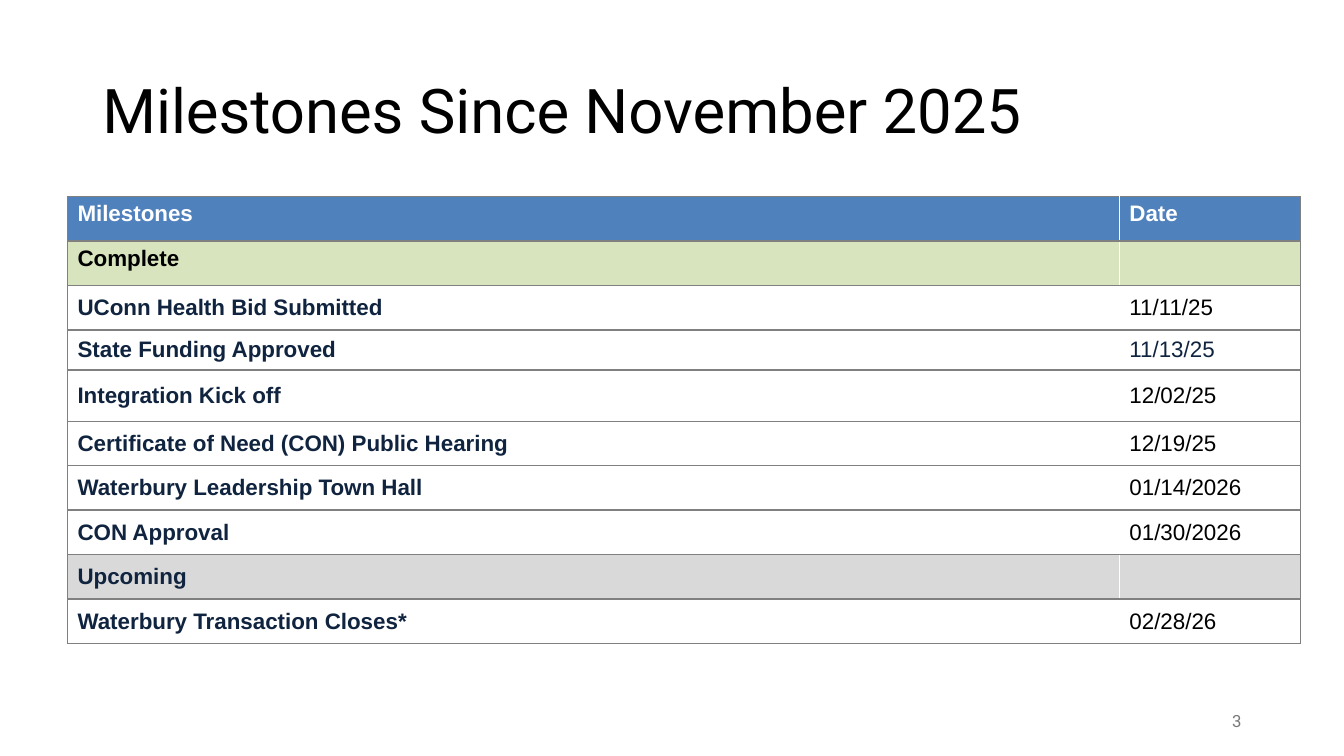
from lxml import etree
from pptx import Presentation
from pptx.dml.color import RGBColor
from pptx.enum import text
from pptx.oxml import ns
from pptx.util import Pt

COLORS = {
    "black": "000000", "white": "FFFFFF", "navy": "10243F", "blue": "4F81BD",
    "green": "D7E4BD", "silver": "D9D9D9", "border": "808080", "number": "797979",
}
ROW_HEIGHT = 31.8
COLUMN_WIDTHS = (751.4, 129.3)

# milestone, date, fill, milestone colour, date colour, row height
MILESTONES = [
    ("Milestones", "Date", "blue", "white", "white", ROW_HEIGHT),
    ("Complete", "", "green", "black", "black", ROW_HEIGHT),
    ("UConn Health Bid Submitted", "11/11/25", "white", "navy", "black", ROW_HEIGHT),
    ("State Funding Approved", "11/13/25", "white", "navy", "navy", 28.6),
    ("Integration Kick off", "12/02/25", "white", "navy", "black", 36.5),
    ("Certificate of Need (CON) Public Hearing", "12/19/25", "white", "navy", "black", ROW_HEIGHT),
    ("Waterbury Leadership Town Hall", "01/14/2026", "white", "navy", "black", ROW_HEIGHT),
    ("CON Approval", "01/30/2026", "white", "navy", "black", ROW_HEIGHT),
    ("Upcoming", "", "silver", "navy", "black", ROW_HEIGHT),
    ("Waterbury Transaction Closes*", "02/28/26", "white", "navy", "black", ROW_HEIGHT),
]


def rgb(color):
    return RGBColor.from_string(COLORS[color])


def write(frame, words, size=16, font="Arial", color="black", bold=False,
          align=text.PP_ALIGN.LEFT, spacing=1.0):
    paragraph = frame.paragraphs[0]
    paragraph.alignment = align
    paragraph.line_spacing = spacing
    run = paragraph.add_run()
    run.text = words
    run.font.size = Pt(size)
    run.font.name = font
    run.font.bold = bold
    run.font.color.rgb = rgb(color)


def add_label(slide, words, left, top, width, height, **style):
    label = slide.shapes.add_textbox(Pt(left), Pt(top), Pt(width), Pt(height))
    label.text_frame.word_wrap = True
    label.text_frame.vertical_anchor = text.MSO_ANCHOR.MIDDLE
    write(label.text_frame, words, font="Roboto", **style)


def set_borders(cell, **sides):
    """Draw 1 pt borders; sides are L, R, T, B in schema order."""
    properties = cell._tc.get_or_add_tcPr()
    for position, (side, color) in enumerate(sides.items()):
        line = etree.Element(ns.qn(f"a:ln{side}"), w=str(Pt(1)))
        fill = etree.SubElement(line, ns.qn("a:solidFill"))
        etree.SubElement(fill, ns.qn("a:srgbClr"), val=COLORS[color])
        properties.insert(position, line)


def fill_cell(cell, words, fill, anchor, **style):
    cell.fill.solid()
    cell.fill.fore_color.rgb = rgb(fill)
    cell.vertical_anchor = anchor
    if words:
        write(cell.text_frame, words, **style)


def add_milestone_table(slide, left, top):
    height = sum(row[-1] for row in MILESTONES)
    table = slide.shapes.add_table(
        len(MILESTONES), len(COLUMN_WIDTHS),
        Pt(left), Pt(top), Pt(sum(COLUMN_WIDTHS)), Pt(height)).table
    for column, width in zip(table.columns, COLUMN_WIDTHS):
        column.width = Pt(width)

    for index, (milestone, date, fill, name_color, date_color, row_height) in enumerate(MILESTONES):
        table.rows[index].height = Pt(row_height)
        anchor = text.MSO_ANCHOR.TOP if index < 2 else text.MSO_ANCHOR.MIDDLE
        name_cell, date_cell = table.cell(index, 0), table.cell(index, 1)
        fill_cell(name_cell, milestone, fill, anchor, color=name_color, bold=True)
        fill_cell(date_cell, date, fill, anchor, color=date_color, bold=index == 0)
        set_borders(name_cell, L="border", R="white", T="border", B="border")
        set_borders(date_cell, L="white", R="border", T="border", B="border")


def main():
    deck = Presentation()
    deck.slide_width, deck.slide_height = Pt(960), Pt(540)
    slide = deck.slides.add_slide(deck.slide_layouts[6])
    add_label(slide, "Milestones Since November 2025", 66, 28.75, 828, 104.4,
              size=44, spacing=0.9)
    add_label(slide, "3", 678, 500.5, 216, 28.75,
              size=12, color="number", align=text.PP_ALIGN.RIGHT)
    add_milestone_table(slide, 48.2, 140.4)
    deck.save("out.pptx")


if __name__ == "__main__":
    main()
